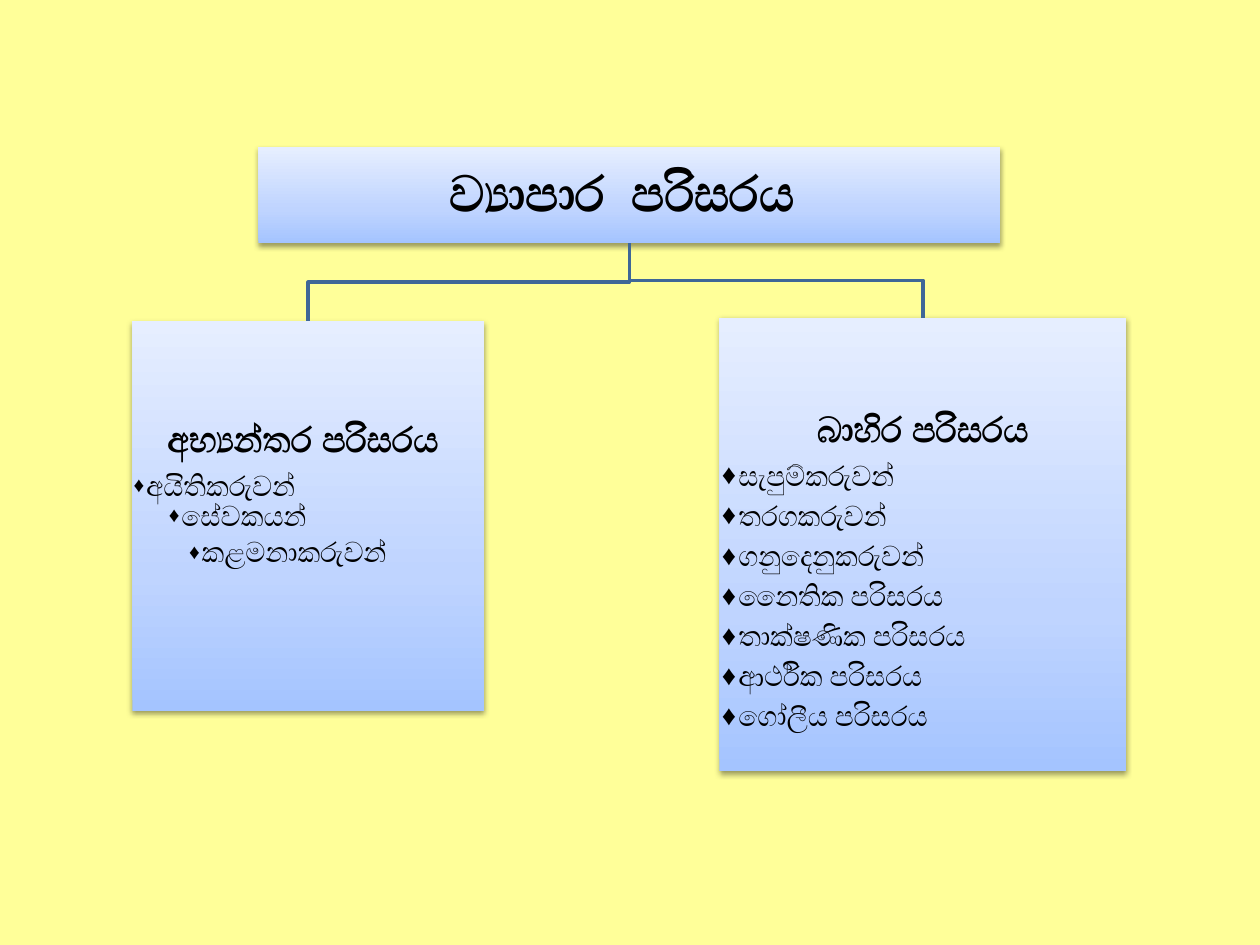
from dataclasses import dataclass

from pptx import Presentation
from pptx.dml.color import RGBColor
from pptx.enum.text import MSO_ANCHOR, MSO_AUTO_SIZE, PP_ALIGN
from pptx.oxml import parse_xml
from pptx.oxml.ns import nsdecls
from pptx.util import Inches, Pt

CENTER, LEFT = PP_ALIGN.CENTER, PP_ALIGN.LEFT
MIDDLE, TOP = MSO_ANCHOR.MIDDLE, MSO_ANCHOR.TOP
NO_AUTOFIT = MSO_AUTO_SIZE.NONE

YELLOW = RGBColor(0xFF, 0xFF, 0x99)
LINE_BLUE = RGBColor(0x3F, 0x67, 0x97)
BLACK = RGBColor(0x00, 0x00, 0x00)
GRADIENT_STOPS = (
    (0, RGBColor(0xA4, 0xC4, 0xFF)),
    (35, RGBColor(0xBF, 0xD4, 0xFF)),
    (100, RGBColor(0xE6, 0xEE, 0xFF)),
)
TEXT_FONT = "Calibri"
BULLET_FONT = "Times New Roman"
ITEM_SIZE = 16
JOINER = chr(0x200D)


@dataclass(frozen=True)
class Item:
    text: str
    offset: float = 0
    before: float = 0
    after: float = 5.6


@dataclass(frozen=True)
class Box:
    left: float
    top: float
    width: float
    height: float
    heading: str
    heading_size: int = 20
    anchor: MSO_ANCHOR = TOP
    inset: float = 0.02
    inset_top: float = 0.02
    inset_right: float = 0.02
    bullet_percent: int = 100
    bullet_width: float = 0.13
    items: tuple[Item, ...] = ()

    @property
    def center(self) -> float:
        return self.left + self.width / 2

    @property
    def bottom(self) -> float:
        return self.top + self.height


ROOT = Box(2.05, 1.17, 5.89, 0.76, f"ව්{JOINER}යාපාර  පරිසරය", heading_size=28,
           anchor=MIDDLE, inset_right=0.13)
INTERNAL = Box(
    1.05, 2.55, 2.79, 3.09, f"අභ්{JOINER}යන්තර පරිසරය",
    inset=0.01, inset_top=0.8, inset_right=0.09,
    bullet_percent=75, bullet_width=0.1,
    items=(
        Item("අයිතිකරුවන්", after=0),
        Item("සේවකයන්", offset=0.28, after=0),
        Item("කළමනාකරුවන්", offset=0.44, before=3.4),
    ),
)
EXTERNAL = Box(
    5.71, 2.52, 3.23, 3.6, "බාහිර පරිසරය", inset_top=0.75,
    items=tuple(Item(text) for text in (
        "සැපුම්කරුවන්",
        "තරගකරුවන්",
        "ගනුදෙනුකරුවන්",
        "නෛතික පරිසරය",
        "තාක්ෂණික පරිසරය",
        "ආර්ථික පරිසරය",
        "ගෝලීය පරිසරය",
    )),
)


def write_text(paragraph, text: str, *, size: float, bold: bool = False,
               align: PP_ALIGN = LEFT, before: float = 0, after: float = 0) -> None:
    paragraph.alignment = align
    paragraph.line_spacing = 0.9
    paragraph.space_before = Pt(before)
    paragraph.space_after = Pt(after)
    run = paragraph.add_run()
    run.text = text
    run.font.name = TEXT_FONT
    run.font.size = Pt(size)
    run.font.bold = bold
    run.font.color.rgb = BLACK


def set_bullet(paragraph, *, percent: int = 100, width: float = 0,
               offset: float = 0, character: str = "") -> None:
    properties = paragraph._p.get_or_add_pPr()
    properties.set("marL", str(Inches(offset + width)))
    properties.set("indent", str(-Inches(width)))
    if not character:
        properties.append(parse_xml(f"<a:buNone {nsdecls('a')}/>"))
        return
    for element in (
        f'<a:buSzPct {nsdecls("a")} val="{percent * 1000}"/>',
        f'<a:buFont {nsdecls("a")} typeface="{BULLET_FONT}"/>',
        f'<a:buChar {nsdecls("a")} char="{character}"/>',
    ):
        properties.append(parse_xml(element))


def style_panel(shape) -> None:
    stops = "".join(
        f'<a:gs pos="{position * 1000}"><a:srgbClr val="{color}"/></a:gs>'
        for position, color in GRADIENT_STOPS
    )
    gradient = (f'<a:gradFill {nsdecls("a")} rotWithShape="1"><a:gsLst>{stops}</a:gsLst>'
                '<a:lin ang="16200000" scaled="0"/></a:gradFill>')
    shadow = (f'<a:effectLst {nsdecls("a")}><a:outerShdw blurRad="{Pt(3.1)}" '
              f'dist="{Pt(1.6)}" dir="5400000" rotWithShape="0"><a:srgbClr val="{BLACK}">'
              '<a:alpha val="38000"/></a:srgbClr></a:outerShdw></a:effectLst>')
    for element in (gradient, shadow):
        shape._element.spPr.append(parse_xml(element))


def fill_box(shape, box: Box) -> None:
    shape.left, shape.top = Inches(box.left), Inches(box.top)
    shape.width, shape.height = Inches(box.width), Inches(box.height)
    style_panel(shape)
    frame = shape.text_frame
    frame.word_wrap = True
    frame.auto_size = NO_AUTOFIT
    frame.vertical_anchor = box.anchor
    frame.margin_left = frame.margin_bottom = Inches(box.inset)
    frame.margin_top = Inches(box.inset_top)
    frame.margin_right = Inches(box.inset_right)
    heading = frame.paragraphs[0]
    write_text(heading, box.heading, size=box.heading_size, bold=True,
               align=CENTER, after=box.heading_size * 0.35)
    set_bullet(heading)
    for item in box.items:
        paragraph = frame.add_paragraph()
        write_text(paragraph, item.text, size=ITEM_SIZE,
                   before=item.before, after=item.after)
        set_bullet(paragraph, percent=box.bullet_percent, width=box.bullet_width,
                   offset=item.offset, character="♦")


def draw_branch(slide, parent: Box, child: Box) -> None:
    middle = (parent.bottom + child.top) / 2
    builder = slide.shapes.build_freeform(
        Inches(parent.center), Inches(parent.bottom))
    corners = ((parent.center, middle), (child.center, middle),
               (child.center, child.top))
    builder.add_line_segments(
        [(Inches(x), Inches(y)) for x, y in corners], close=False)
    shape = builder.convert_to_shape()
    shape.shadow.inherit = False
    shape.fill.background()
    shape.line.color.rgb = LINE_BLUE
    shape.line.width = Pt(2)


def main() -> None:
    presentation = Presentation()
    presentation.slide_width, presentation.slide_height = Inches(10), Inches(7.5)
    slide = presentation.slides.add_slide(presentation.slide_layouts[3])
    slide.background.fill.solid()
    slide.background.fill.fore_color.rgb = YELLOW
    for placeholder, box in zip(slide.placeholders, (ROOT, INTERNAL, EXTERNAL)):
        fill_box(placeholder, box)
    for child in (EXTERNAL, INTERNAL):
        draw_branch(slide, ROOT, child)
    presentation.save("out.pptx")


if __name__ == "__main__":
    main()
